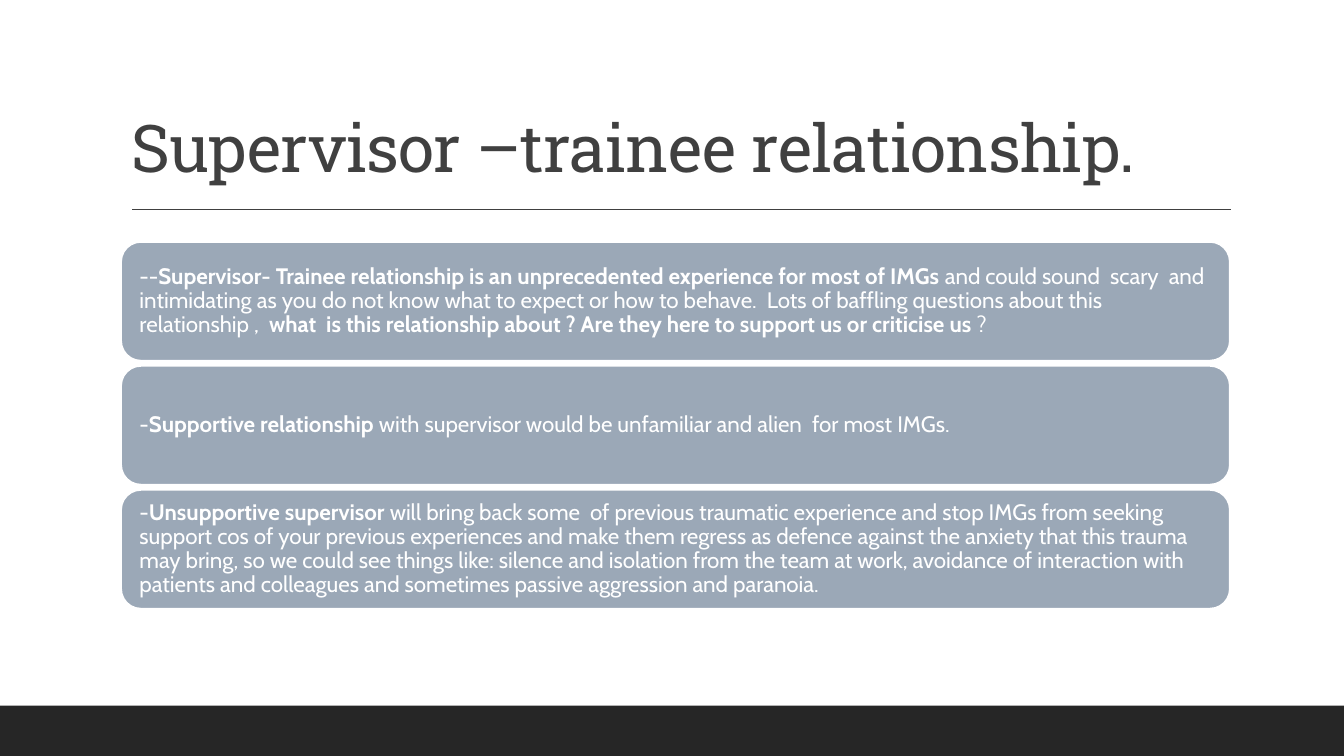
from lxml import etree
from pptx import Presentation
from pptx.dml.color import RGBColor
from pptx.enum.shapes import MSO_CONNECTOR, MSO_SHAPE
from pptx.enum.text import MSO_ANCHOR, MSO_AUTO_SIZE, PP_ALIGN
from pptx.oxml.ns import qn
from pptx.util import Pt

RECT, ROUND = MSO_SHAPE.RECTANGLE, MSO_SHAPE.ROUNDED_RECTANGLE
STRAIGHT = MSO_CONNECTOR.STRAIGHT
MIDDLE, BOTTOM = MSO_ANCHOR.MIDDLE, MSO_ANCHOR.BOTTOM
LEFT, NO_FIT = PP_ALIGN.LEFT, MSO_AUTO_SIZE.NONE

WIDTH, HEIGHT = 960, 540
COLORS = {"white": "FFFFFF", "ink": "404040", "band": "262626", "card": "9BA8B7"}
TITLE = "Supervisor –trainee relationship."
CARDS = [
    [
        ("--", False),
        ("Supervisor- Trainee relationship is an unprecedented experience for most of IMGs ", True),
        ("and could sound  scary  and intimidating as you do not know what to expect or how "
         "to behave.  Lots of baffling questions about this relationship ,  ", False),
        ("what  is this relationship about ? Are they here to support us or criticise us ", True),
        ("?", False),
    ],
    [
        ("-", False),
        ("Supportive relationship ", True),
        ("with supervisor would be unfamiliar and alien  for most IMGs.", False),
    ],
    [
        ("-", False),
        ("Unsupportive supervisor ", True),
        ("will bring back some  of previous traumatic experience and stop IMGs from seeking  "
         "support cos of your previous experiences and make them regress as defence against "
         "the anxiety that this trauma may bring, so we could see things like: silence and "
         "isolation from the team at work, avoidance of interaction with patients and "
         "colleagues and sometimes passive aggression and paranoia.", False),
    ],
]


def rgb(name):
    """Return the named palette colour."""
    return RGBColor.from_string(COLORS[name])


def style_paragraph(p, font, size, color):
    """Apply the shared text format to a paragraph."""
    p.alignment = LEFT
    p.line_spacing = 0.9
    p.font.name = font
    p.font.size = Pt(size)
    p.font.color.rgb = rgb(color)


def add_box(s, kind, x, y, w, h, fill):
    """Add a filled shape without outline or shadow."""
    sp = s.shapes.add_shape(kind, Pt(x), Pt(y), Pt(w), Pt(h))
    sp.shadow.inherit = False
    sp.fill.solid()
    sp.fill.fore_color.rgb = rgb(fill)
    sp.line.fill.background()
    return sp


def add_title(s, x, y, w, h):
    """Fill the title placeholder and draw the rule below it."""
    sp = s.shapes.title
    sp.left, sp.top, sp.width, sp.height = Pt(x), Pt(y), Pt(w), Pt(h)
    tf = sp.text_frame
    tf.text = TITLE
    tf.word_wrap = True
    tf.auto_size = NO_FIT
    tf.vertical_anchor = BOTTOM
    p = tf.paragraphs[0]
    style_paragraph(p, "Roboto Slab", 47, "ink")
    p.runs[0].font._element.set("spc", "-50")

    rule_y = y + h + 12.8
    rule = s.shapes.add_connector(STRAIGHT, Pt(x + 8), Pt(rule_y), Pt(x + w + 0.7), Pt(rule_y))
    rule.line.color.rgb = rgb("ink")
    rule.line.width = Pt(1)
    etree.SubElement(rule._element.spPr, qn("a:effectLst"))


def add_card(s, x, y, w, h, runs):
    """Add one rounded card with its mixed-weight paragraph."""
    sp = add_box(s, ROUND, x, y, w, h, "card")
    sp.line.color.rgb = rgb("white")
    sp.line.width = Pt(1.25)
    tf = sp.text_frame
    tf.word_wrap = True
    tf.vertical_anchor = MIDDLE
    tf.margin_left = tf.margin_right = Pt(9)
    tf.margin_top = tf.margin_bottom = Pt(8)
    p = tf.paragraphs[0]
    style_paragraph(p, "Cabin", 16, "white")
    for text, bold in runs:
        r = p.add_run()
        r.text = text
        r.font.bold = bold


def add_cards(s, x, y, w, h, gap):
    """Stack the cards evenly in the given box."""
    card_h = (h - gap * (len(CARDS) - 1)) / len(CARDS)
    for i, runs in enumerate(CARDS):
        add_card(s, x, y + i * (card_h + gap), w, card_h, runs)


def main():
    """Build and save the slide."""
    prs = Presentation()
    prs.slide_width, prs.slide_height = Pt(WIDTH), Pt(HEIGHT)
    s = prs.slides.add_slide(prs.slide_layouts[5])
    s.background.fill.solid()
    s.background.fill.fore_color.rgb = rgb("white")
    add_box(s, RECT, 0, HEIGHT - 36, WIDTH, 36, "band")
    add_title(s, 86.5, 22.5, 792, 114.5)
    add_cards(s, 86.5, 172.8, 792, 262, 3.7)
    prs.save("out.pptx")


if __name__ == "__main__":
    main()
